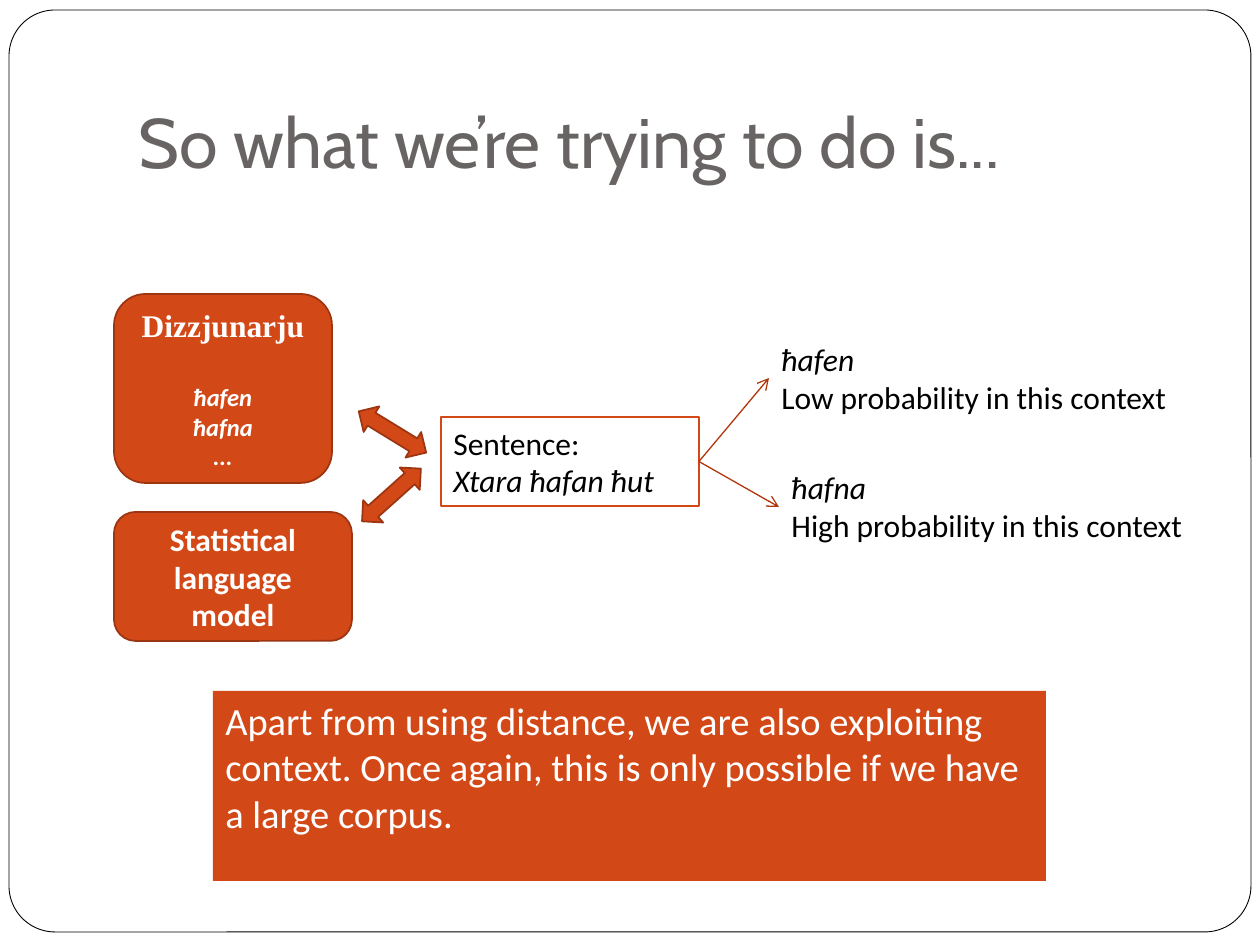
from pptx import Presentation
from pptx.dml.color import RGBColor
from pptx.enum.shapes import MSO_CONNECTOR, MSO_SHAPE
from pptx.enum.text import MSO_ANCHOR, MSO_AUTO_SIZE, PP_ALIGN
from pptx.util import Pt
from lxml.etree import SubElement
from pptx.oxml.ns import qn

PX = 914400 / 126  # EMU in one px
ORANGE = RGBColor(0xD3, 0x48, 0x17)
RUST = RGBColor(0x9C, 0x35, 0x11)
RED = RGBColor(0xB1, 0x36, 0x0B)
GREY = RGBColor(0x69, 0x64, 0x64)
WHITE = RGBColor(0xFF, 0xFF, 0xFF)
BLACK = RGBColor(0, 0, 0)


def add_box(kind, box, fill=None, line=None, width=1):
    shape = slide.shapes.add_shape(kind, *[round(n * PX) for n in box])
    shape.shadow.inherit = False
    if fill is None:
        shape.fill.background()
    else:
        shape.fill.solid()
        shape.fill.fore_color.rgb = fill
    if line is None:
        shape.line.fill.background()
    else:
        shape.line.color.rgb = line
        shape.line.width = Pt(width)
    return shape


def write(shape, lines, color, align=PP_ALIGN.LEFT):
    """Each line is (text, size, bold, italic)."""
    frame = shape.text_frame
    for i, (text, size, bold, italic) in enumerate(lines):
        para = frame.add_paragraph() if i else frame.paragraphs[0]
        para.text = text
        para.alignment = align
        font = para.font
        font.name, font.size, font.color.rgb = "Calibri", Pt(size), color
        font.bold, font.italic = bold, italic
    return frame


deck = Presentation()
deck.slide_width, deck.slide_height = round(1260 * PX), round(945 * PX)
slide = deck.slides.add_slide(deck.slide_layouts[5])
title = slide.shapes.title

# Frame, placed behind the title
border = add_box(MSO_SHAPE.ROUNDED_RECTANGLE, (9, 10, 1242, 922), WHITE, BLACK, 0.5)
border.adjustments[0] = 0.05
title._element.addprevious(border._element)

# Title
title.left, title.top, title.width, title.height = [
    round(n * PX) for n in (126, 38, 1071, 157)]
frame = write(title, [("So what we’re trying to do is...", 40, False, False)], GREY)
frame.paragraphs[0].font.name = "Cabin"
frame.auto_size = MSO_AUTO_SIZE.NONE
frame.vertical_anchor = MSO_ANCHOR.BOTTOM
frame.margin_bottom = Pt(7.2)

# Dictionary and language model
words = add_box(MSO_SHAPE.ROUNDED_RECTANGLE, (114, 294, 218, 189), ORANGE, RUST)
lines = [("Dizzjunarju", 18, True, False)]
lines += [(text, 14, True, True) for text in ("ħafen", "ħafna", "...")]
head = write(words, lines, WHITE, PP_ALIGN.CENTER).paragraphs[0]
head.font.name = "Times New Roman"
head.space_after = Pt(22)

model = add_box(MSO_SHAPE.ROUNDED_RECTANGLE, (114, 512, 238, 129), ORANGE, RUST)
write(model, [("Statistical language model", 18, True, False)], WHITE, PP_ALIGN.CENTER)

# Double arrows to the sentence
for left, top, turn in ((353, 417, 31.5), (352, 480, 318.2)):
    arrow = add_box(MSO_SHAPE.LEFT_RIGHT_ARROW, (left, top, 79, 30), ORANGE, RUST)
    arrow.rotation = turn

# Sentence
query = add_box(MSO_SHAPE.RECTANGLE, (441, 417, 258, 89), None, ORANGE, 0.75)
write(query, [("Sentence:", 18, False, False),
              ("Xtara ħafan ħut", 18, False, True)], BLACK)

# Candidates, each with an arrow from the sentence
for word, level, left, top, width, tip in (
        ("ħafen", "Low", 769, 334, 415, 378),
        ("ħafna", "High", 779, 462, 421, 507)):
    label = slide.shapes.add_textbox(*[round(n * PX) for n in (left, top, width, 89)])
    label.text_frame.word_wrap = False
    write(label, [(word, 18, False, True),
                  (f"{level} probability in this context", 18, False, False)], BLACK)
    link = slide.shapes.add_connector(
        MSO_CONNECTOR.STRAIGHT, 0, 0, round(left * PX), round(tip * PX))
    link.begin_connect(query, 3)
    link.line.color.rgb = RED
    link.line.width = Pt(0.75)
    SubElement(link.line._get_or_add_ln(), qn("a:tailEnd"), type="arrow")
    SubElement(link._element.spPr, qn("a:effectLst"))

# Closing note
note = add_box(MSO_SHAPE.RECTANGLE, (213, 691, 833, 190), ORANGE)
frame = write(note, [(
    "Apart from using distance, we are also exploiting context. "
    "Once again, this is only possible if we have a large corpus.",
    22, False, False)], WHITE)
frame.vertical_anchor = MSO_ANCHOR.TOP

deck.save("out.pptx")
